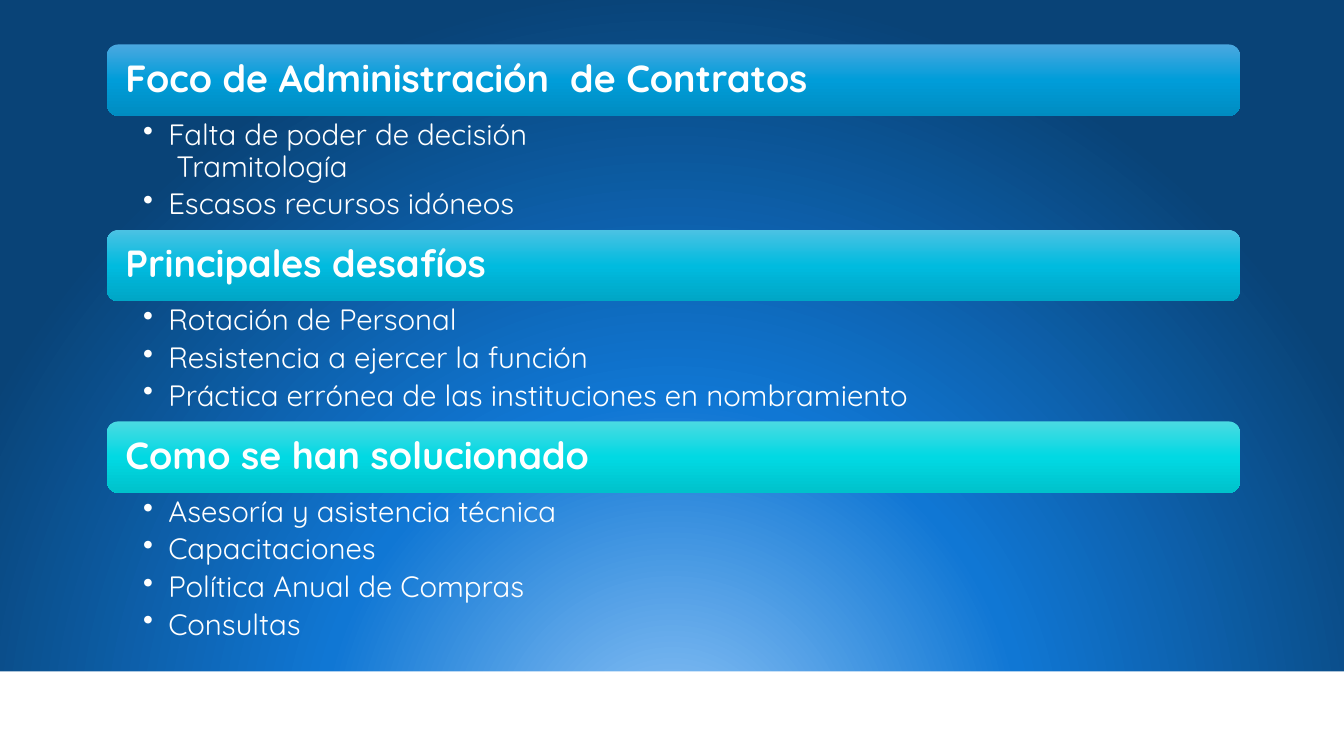
from lxml import etree
from pptx import Presentation
from pptx.dml.color import RGBColor
from pptx.enum.shapes import MSO_SHAPE as Shape
from pptx.enum.text import MSO_ANCHOR as Anchor, PP_ALIGN as Align
from pptx.oxml.ns import qn
from pptx.util import Inches, Pt

# Content: heading, band colours, height of the list, bullet points
SECTIONS = [
    ("Foco de Administración  de Contratos", "focus", 1.13,
     ["Falta de poder de decisión\v Tramitología", "Escasos recursos idóneos"]),
    ("Principales desafíos", "challenges", 1.19,
     ["Rotación de Personal", "Resistencia a ejercer la función",
      "Práctica errónea de las instituciones en nombramiento"]),
    ("Como se han solucionado", "solutions", 1.59,
     ["Asesoría y asistencia técnica", "Capacitaciones",
      "Política Anual de Compras", "Consultas"]),
]
COLORS = {"white": "FFFFFF"}
GRADIENTS = {
    "background": [(0, "91C6F7"), (46, "1077D4"), (100, "094377")],
    "focus": [(0, "4BA8E0"), (50, "009DD9"), (100, "008CC1")],
    "challenges": [(0, "4BC2E3"), (50, "00BBDF"), (100, "00A6C6")],
    "solutions": [(0, "4BDAE2"), (50, "01D9E3"), (100, "00C2CB")],
}
FONT = "Quicksand"
LEFT, TOP, WIDTH, BAND_HEIGHT = 1.06, 0.44, 11.24, 0.71


def set_gradient(fill, owner, stops, circle=False):
    """Fill with the stops, downwards or as a circle from below the slide."""
    fill.gradient()
    gradient = owner.find(".//" + qn("a:gradFill"))
    for child in list(gradient):
        gradient.remove(child)
    stop_list = etree.SubElement(gradient, qn("a:gsLst"))
    for position, color in stops:
        stop = etree.SubElement(stop_list, qn("a:gs"), pos=str(position * 1000))
        etree.SubElement(stop, qn("a:srgbClr"), val=color)
    if circle:
        direction = etree.SubElement(gradient, qn("a:path"), path="circle")
        etree.SubElement(direction, qn("a:fillToRect"),
                         l="50000", t="130000", r="50000", b="-30000")
    else:
        etree.SubElement(gradient, qn("a:lin"), ang="5400000", scaled="0")


def write_text(frame, lines, size, margins, bold=False, bullet=False,
               anchor=Anchor.TOP, space_after=0):
    frame.word_wrap = True
    frame.vertical_anchor = anchor
    (frame.margin_left, frame.margin_top,
     frame.margin_right, frame.margin_bottom) = map(Inches, margins)
    for index, line in enumerate(lines):
        paragraph = frame.add_paragraph() if index else frame.paragraphs[0]
        paragraph.text = line
        paragraph.alignment = Align.LEFT
        paragraph.line_spacing = 0.9
        paragraph.space_after = Pt(space_after)
        if bullet:
            properties = paragraph._p.get_or_add_pPr()
            properties.set("marL", str(Inches(0.25)))
            properties.set("indent", str(Inches(-0.25)))
            etree.SubElement(properties, qn("a:buChar"), char="•")
        font = paragraph.font
        font.name, font.size, font.bold = FONT, Pt(size), bold
        font.color.rgb = RGBColor.from_string(COLORS["white"])


presentation = Presentation()
presentation.slide_width, presentation.slide_height = Inches(13.33), Inches(7.5)
slide = presentation.slides.add_slide(presentation.slide_layouts[6])

# Background and white footer strip
set_gradient(slide.background.fill, slide._element, GRADIENTS["background"], circle=True)
footer = slide.shapes.add_shape(
    Shape.RECTANGLE, 0, Inches(6.66), presentation.slide_width, Inches(0.84))
footer.shadow.inherit = False
footer.fill.solid()
footer.fill.fore_color.rgb = RGBColor.from_string(COLORS["white"])
footer.line.fill.background()

# Heading bands, each with its list below
top = TOP
for heading, gradient_name, list_height, points in SECTIONS:
    band = slide.shapes.add_shape(
        Shape.ROUNDED_RECTANGLE, Inches(LEFT), Inches(top), Inches(WIDTH), Inches(BAND_HEIGHT))
    band.shadow.inherit = False
    band.line.fill.background()
    set_gradient(band.fill, band._element, GRADIENTS[gradient_name])
    write_text(band.text_frame, [heading], 27, (0.15, 0.11, 0.15, 0.11),
               bold=True, anchor=Anchor.MIDDLE)
    top += BAND_HEIGHT

    box = slide.shapes.add_textbox(
        Inches(LEFT), Inches(top), Inches(WIDTH), Inches(list_height))
    write_text(box.text_frame, points, 21, (0.36, 0.04, 0.21, 0.04),
               bullet=True, space_after=4.2)
    top += list_height

presentation.save("out.pptx")
